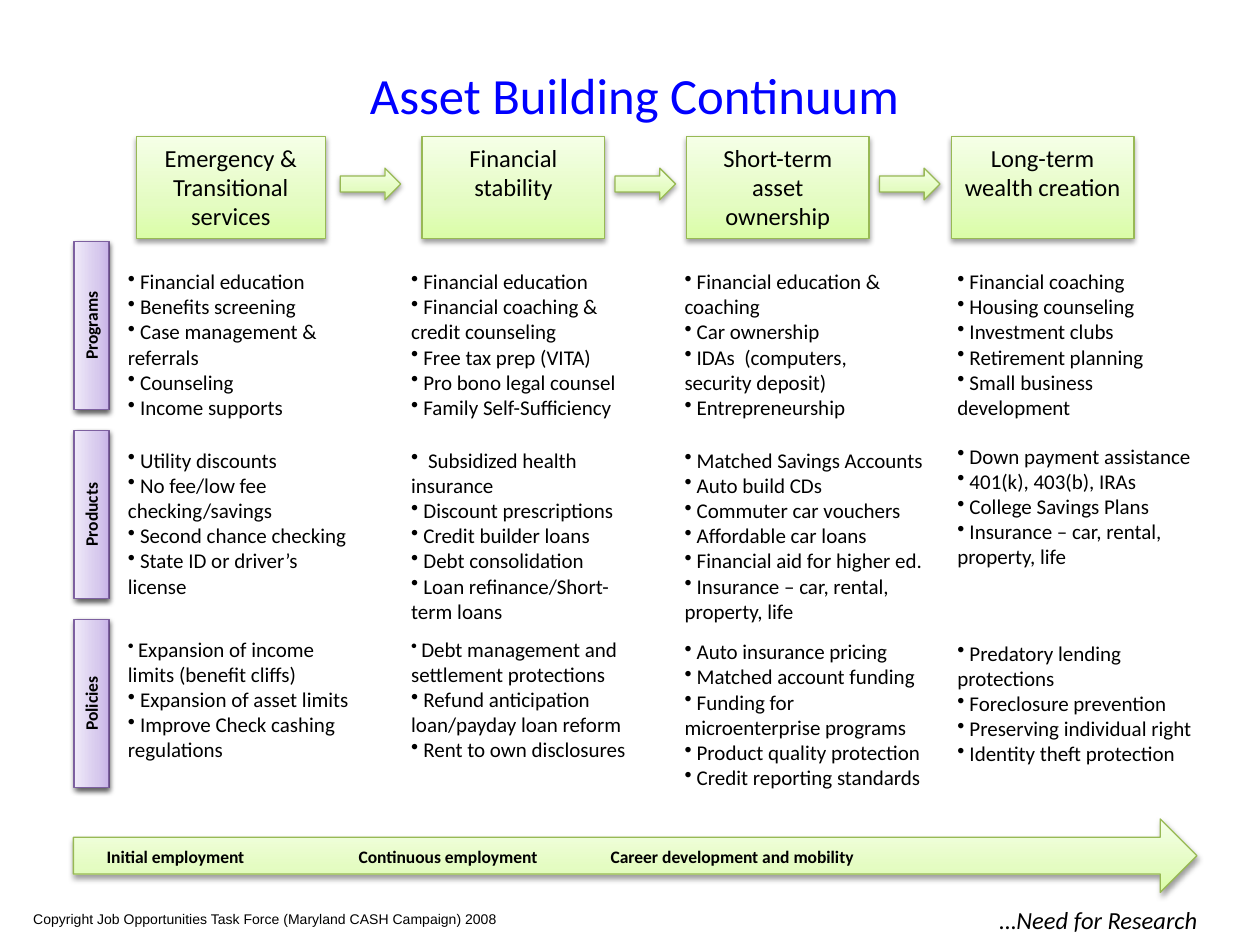
from dataclasses import dataclass

from lxml import etree
from pptx import Presentation
from pptx.dml.color import RGBColor
from pptx.enum.shapes import MSO_SHAPE
from pptx.enum.text import MSO_ANCHOR, PP_ALIGN
from pptx.oxml import parse_xml
from pptx.oxml.ns import nsdecls, qn
from pptx.util import Cm, Pt

RECTANGLE = MSO_SHAPE.RECTANGLE
RIGHT_ARROW = MSO_SHAPE.RIGHT_ARROW
LEFT, CENTER = PP_ALIGN.LEFT, PP_ALIGN.CENTER
TOP, MIDDLE = MSO_ANCHOR.TOP, MSO_ANCHOR.MIDDLE


@dataclass(frozen=True)
class Style:
    stops: tuple[tuple[int, str], ...]
    line: str


@dataclass(frozen=True)
class Box:
    """Position and size in centimetres."""
    left: float
    top: float
    width: float
    height: float


@dataclass(frozen=True)
class Cell:
    items: tuple[str, ...]
    width: float = 4.88
    shift: float = 0  # offset from the row's top
    lead_size: float = 12  # size of the first bullet and its space


GREEN = Style(((0, "DAFDA7"), (35, "E4FCC2"), (100, "F5FFE7")), "98B955")
PURPLE = Style(((0, "C9B5E8"), (35, "D8CBEE"), (100, "F0EAF9")), "7D60A0")

STAGES = (
    ("Emergency & Transitional services", Box(2.75, 2.75, 3.81, 2.06)),
    ("Financial stability", Box(8.51, 2.75, 3.68, 2.06)),
    ("Short-term asset ownership", Box(13.84, 2.75, 3.68, 2.06)),
    ("Long-term wealth creation", Box(19.18, 2.75, 3.68, 2.06)),
)
STAGE_ARROW_LEFTS = (6.86, 12.4, 17.73)

COLUMN_LEFTS = (2.33, 8.04, 13.55, 19.05)
ROW_TOPS = (5.29, 8.89, 12.7)
ROW_HEIGHT = 3.4
ROW_LABELS = ("Programs", "Products", "Policies")

# One row of cells per label, one cell per stage
CELLS = (
    (
        Cell(("Financial education", "Benefits screening",
              "Case management & referrals", "Counseling", "Income supports")),
        Cell(("Financial education", "Financial coaching & credit counseling",
              "Free tax prep (VITA)", "Pro bono legal counsel",
              "Family Self-Sufficiency")),
        Cell(("Financial education & coaching", "Car ownership",
              "IDAs  (computers, security deposit)", "Entrepreneurship")),
        Cell(("Financial coaching", "Housing counseling", "Investment clubs",
              "Retirement planning", "Small business development")),
    ),
    (
        Cell(("Utility discounts", "No fee/low fee checking/savings",
              "Second chance checking", "State ID or driver’s license"), 5.16),
        Cell((" Subsidized health insurance", "Discount prescriptions",
              "Credit builder loans", "Debt consolidation",
              "Loan refinance/Short-term loans")),
        Cell(("Matched Savings Accounts", "Auto build CDs",
              "Commuter car vouchers", "Affordable car loans",
              "Financial aid for higher ed.",
              "Insurance – car, rental, property, life"), 5.5),
        Cell(("Down payment assistance", "401(k), 403(b), IRAs",
              "College Savings Plans",
              "Insurance – car, rental, property, life"), 5.5, -0.08),
    ),
    (
        Cell(("Expansion of income limits (benefit cliffs)",
              "Expansion of asset limits",
              "Improve Check cashing regulations"), 5.08, lead_size=10),
        Cell(("Debt management and settlement protections",
              "Refund anticipation loan/payday loan reform",
              "Rent to own disclosures"), lead_size=10),
        Cell(("Auto insurance pricing", "Matched account funding",
              "Funding for microenterprise programs",
              "Product quality protection", "Credit reporting standards"),
             5.29, 0.05),
        Cell(("Predatory lending protections", "Foreclosure prevention",
              "Preserving individual right", "Identity theft protection"),
             5.5, 0.08),
    ),
)


def color(value: str) -> RGBColor:
    return RGBColor.from_string(value)


def place(box: Box) -> tuple[Cm, Cm, Cm, Cm]:
    return Cm(box.left), Cm(box.top), Cm(box.width), Cm(box.height)


def add_run(paragraph, text: str, *, size: float, font: str = "Calibri",
            fill: str = "000000", bold: bool = False, italic: bool = False):
    run = paragraph.add_run()
    run.text = text
    run.font.name = font
    run.font.size = Pt(size)
    run.font.bold = bold
    run.font.italic = italic
    run.font.color.rgb = color(fill)


def write(shape, text: str, *, align=LEFT, anchor=TOP, **text_format):
    """Put one formatted paragraph into a shape and return the paragraph."""
    frame = shape.text_frame
    frame.word_wrap = True
    frame.vertical_anchor = anchor
    paragraph = frame.paragraphs[0]
    paragraph.alignment = align
    add_run(paragraph, text, **text_format)
    return paragraph


def add_text(slide, box: Box, text: str, **text_format):
    return write(slide.shapes.add_textbox(*place(box)), text, **text_format)


def add_block(slide, kind, box: Box, style: Style):
    """Draw a shape with an upward gradient and a soft shadow."""
    shape = slide.shapes.add_shape(kind, *place(box))
    stops = "".join(
        f'<a:gs pos="{position * 1000}"><a:srgbClr val="{value}"/></a:gs>'
        for position, value in style.stops)
    properties = shape._element.spPr
    properties.append(parse_xml(
        f'<a:gradFill {nsdecls("a")} rotWithShape="1"><a:gsLst>{stops}</a:gsLst>'
        '<a:lin ang="16200000" scaled="0"/></a:gradFill>'))
    shape.line.color.rgb = color(style.line)
    shape.line.width = Pt(0.75)
    shape.shadow.inherit = False
    properties.find(qn("a:effectLst")).append(parse_xml(
        f'<a:outerShdw {nsdecls("a")} blurRad="{Pt(3.1)}" dist="{Pt(1.6)}" '
        'dir="5400000" rotWithShape="0"><a:srgbClr val="000000">'
        '<a:alpha val="38000"/></a:srgbClr></a:outerShdw>'))
    return shape


def add_bullets(slide, left: float, top: float, cell: Cell) -> None:
    box = Box(left, top + cell.shift, cell.width, ROW_HEIGHT)
    frame = slide.shapes.add_textbox(*place(box)).text_frame
    frame.word_wrap = True
    for index, item in enumerate(cell.items):
        paragraph = frame.add_paragraph() if index else frame.paragraphs[0]
        bullet = etree.SubElement(paragraph._p.get_or_add_pPr(), qn("a:buChar"))
        bullet.set("char", "•")
        if index == 0 and cell.lead_size != 12:
            add_run(paragraph, " ", size=cell.lead_size)
            add_run(paragraph, item, size=12)
        else:
            add_run(paragraph, f" {item}", size=12)


def add_row_label(slide, text: str, top: float) -> None:
    length, thickness, center = 3.39, 0.69, 1.84
    add_block(slide, RECTANGLE, Box(1.57, top, 0.64, length), PURPLE)
    label = add_block(
        slide, RECTANGLE,
        Box(center - length / 2, top + (length - thickness) / 2, length, thickness),
        PURPLE)
    label.rotation = 270
    write(label, text, align=CENTER, size=10, bold=True)


def main() -> None:
    presentation = Presentation()
    presentation.slide_width, presentation.slide_height = Cm(25.4), Cm(19.05)
    slide = presentation.slides.add_slide(presentation.slide_layouts[6])

    # Title
    add_text(slide, Box(1.37, 0.84, 22.86, 2.11), "Asset Building Continuum",
             align=CENTER, anchor=MIDDLE, size=29, fill="0000FF")

    # Row labels
    for index, text in enumerate(ROW_LABELS):
        add_row_label(slide, text, 4.87 + 3.81 * index)

    # Employment arrow
    add_block(slide, RIGHT_ARROW, Box(1.48, 16.51, 22.65, 1.48), GREEN)
    phases = add_text(
        slide, Box(1.9, 16.93, 21.59, 0.68),
        "Initial employment\t\tContinuous employment\t\tCareer development and mobility",
        size=10, bold=True)
    tabs = etree.SubElement(phases._p.get_or_add_pPr(), qn("a:tabLst"))
    for position in (3.81, 5.08, 9.5, 10.16):
        etree.SubElement(tabs, qn("a:tab"), pos=str(Cm(position)), algn="l")

    # Bulleted cells, column by column
    for column, left in enumerate(COLUMN_LEFTS):
        for row, top in enumerate(ROW_TOPS):
            add_bullets(slide, left, top, CELLS[row][column])

    # Stages and the arrows between them
    for text, box in STAGES:
        stage = add_block(slide, RECTANGLE, box, GREEN)
        write(stage, text, align=CENTER, size=14)
    for left in STAGE_ARROW_LEFTS:
        add_block(slide, RIGHT_ARROW, Box(left, 3.39, 1.22, 0.64), GREEN)

    # Footer
    add_text(slide, Box(0.42, 18.24, 11.86, 0.6),
             "Copyright Job Opportunities Task Force (Maryland CASH Campaign) 2008",
             size=8, font="Arial")
    add_text(slide, Box(19.9, 18.11, 6.55, 0.86), "…Need for Research",
             size=14, italic=True)

    presentation.save("out.pptx")


if __name__ == "__main__":
    main()
